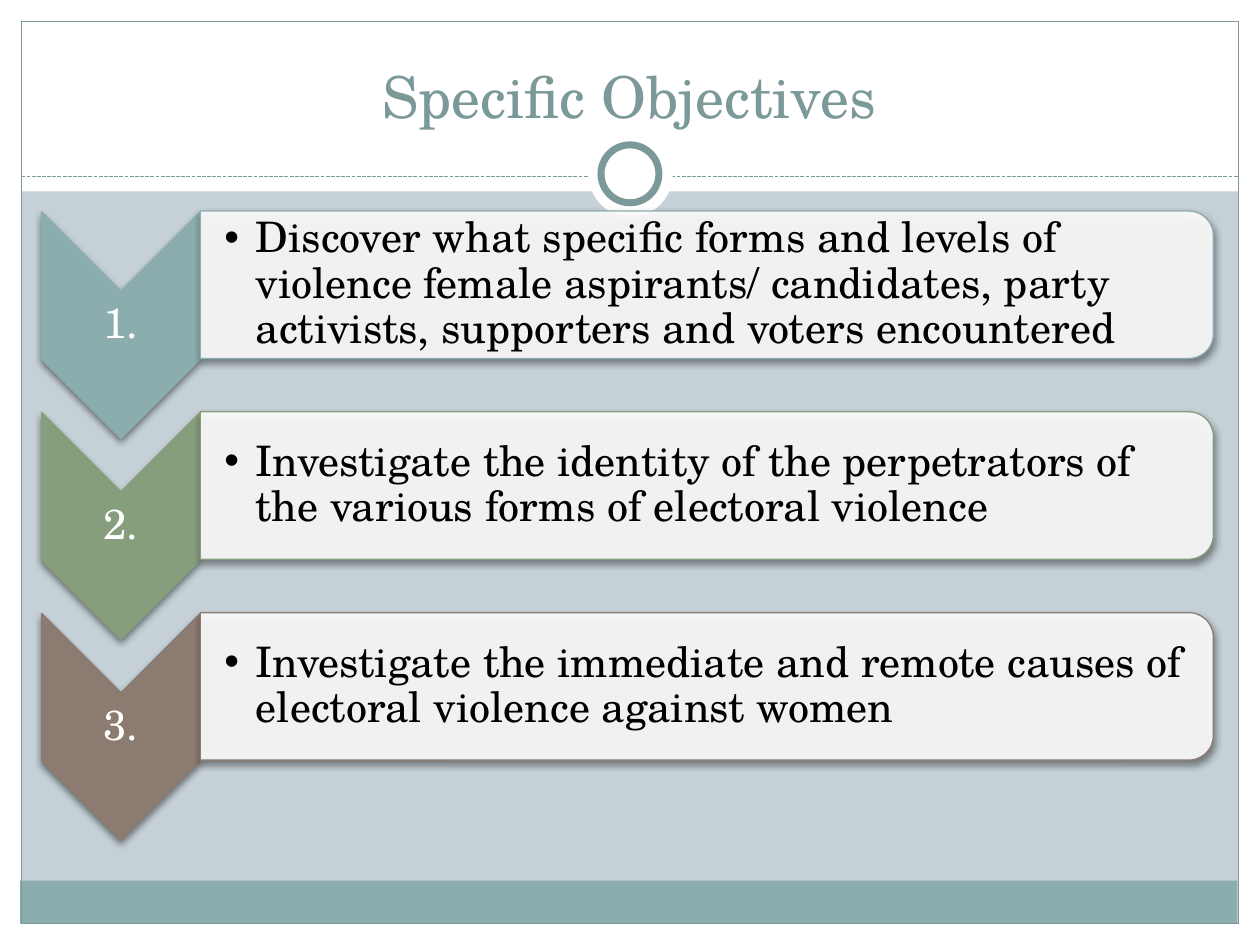
from dataclasses import dataclass

import pptx
import pptx.dml.color
import pptx.enum.dml
import pptx.enum.shapes
import pptx.enum.text
import pptx.oxml.ns
import pptx.util
from lxml import etree
from pptx.dml.color import RGBColor
from pptx.enum.shapes import MSO_SHAPE
from pptx.enum.text import MSO_ANCHOR, PP_ALIGN
from pptx.oxml.ns import qn
from pptx.util import Inches, Pt

WHITE = RGBColor(0xFF, 0xFF, 0xFF)
BLACK = RGBColor(0x00, 0x00, 0x00)
BACKGROUND = RGBColor(0xC5, 0xD1, 0xD7)
TEAL = RGBColor(0x8C, 0xAD, 0xAE)
DARK_TEAL = RGBColor(0x7C, 0x99, 0x9A)
GREEN = RGBColor(0x87, 0x9E, 0x7D)
BROWN = RGBColor(0x8C, 0x7B, 0x70)
FONT = "TeX Gyre Schola"
ROW_PITCH = 1.594


@dataclass(frozen=True)
class Box:
    left: float
    top: float
    width: float
    height: float

    def lengths(self) -> list:
        return [Inches(v) for v in (self.left, self.top, self.width, self.height)]

    def turned(self) -> "Box":
        """Unrotated frame that covers this box after a quarter turn."""
        return Box(self.left + (self.width - self.height) / 2,
                   self.top + (self.height - self.width) / 2,
                   self.height, self.width)


@dataclass(frozen=True)
class Objective:
    number: str
    statement: str
    color: RGBColor


OBJECTIVES = [
    Objective("1.", "Discover what specific forms and levels of violence female "
              "aspirants/ candidates, party activists, supporters and voters "
              "encountered", TEAL),
    Objective("2.", "Investigate the identity of the perpetrators of the various "
              "forms of electoral violence", GREEN),
    Objective("3.", "Investigate the immediate and remote causes of electoral "
              "violence against women", BROWN),
]


def add_panel(slide, kind, box: Box, fill=None, line=None, line_width=0.75):
    panel = slide.shapes.add_shape(kind, *box.lengths())
    panel.shadow.inherit = False
    if fill is None:
        panel.fill.background()
    else:
        panel.fill.solid()
        panel.fill.fore_color.rgb = fill
    if line is None:
        panel.line.fill.background()
    else:
        panel.line.color.rgb = line
        panel.line.width = Pt(line_width)
    return panel


def add_alpha(color_element, percent: int) -> None:
    etree.SubElement(color_element, qn("a:alpha"), val=str(percent * 1000))


def add_raised_panel(slide, kind, box: Box, fill, line):
    """Panel turned by 90 degrees, with a soft shadow below it."""
    panel = add_panel(slide, kind, box.turned(), fill, line)
    panel.rotation = 90
    effects = panel.element.spPr.find(qn("a:effectLst"))
    shadow = etree.SubElement(effects, qn("a:outerShdw"), blurRad=str(Pt(4)),
                              dist=str(Pt(2)), dir="5400000", rotWithShape="0")
    add_alpha(etree.SubElement(shadow, qn("a:srgbClr"), val=str(BLACK)), 45)
    return panel


def add_text(slide, box: Box, text: str, size: float, color: RGBColor,
             frame_format: dict, paragraph_format: dict):
    frame = slide.shapes.add_textbox(*box.lengths()).text_frame
    for name, value in {"word_wrap": True, **frame_format}.items():
        setattr(frame, name, value)
    paragraph = frame.paragraphs[0]
    for name, value in paragraph_format.items():
        setattr(paragraph, name, value)
    run = paragraph.add_run()
    run.text = text
    for name, value in {"name": FONT, "size": Pt(size)}.items():
        setattr(run.font, name, value)
    run.font.color.rgb = color
    return paragraph


def add_bullet(paragraph) -> None:
    properties = paragraph._p.get_or_add_pPr()
    properties.set("marL", str(Inches(0.25)))
    properties.set("indent", str(Inches(-0.25)))
    etree.SubElement(properties, qn("a:buFont"), typeface="Arial")
    etree.SubElement(properties, qn("a:buChar"), char="•")


def add_frame(slide) -> None:
    bands = [
        (Box(0, 7.33, 10, 0.17), WHITE),
        (Box(0, 0, 10, 1.52), WHITE),
        (Box(0, 0, 0.17, 7.5), WHITE),
        (Box(9.83, 0, 0.17, 7.5), WHITE),
        (Box(0.16, 6.99, 9.66, 0.34), TEAL),
    ]
    for box, fill in bands:
        add_panel(slide, MSO_SHAPE.RECTANGLE, box, fill)
    add_panel(slide, MSO_SHAPE.RECTANGLE, Box(0.17, 0.17, 9.66, 7.16), line=DARK_TEAL)

    divider = slide.shapes.add_connector(
        pptx.enum.shapes.MSO_CONNECTOR.STRAIGHT,
        Inches(0.17), Inches(1.4), Inches(9.83), Inches(1.4))
    divider.line.color.rgb = DARK_TEAL
    divider.line.width = Pt(0.75)
    divider.line.dash_style = pptx.enum.dml.MSO_LINE.SQUARE_DOT
    etree.SubElement(divider.element.spPr, qn("a:effectLst"))

    add_panel(slide, MSO_SHAPE.OVAL, Box(4.67, 1.05, 0.67, 0.67), WHITE)
    add_panel(slide, MSO_SHAPE.OVAL, Box(4.77, 1.15, 0.46, 0.46), WHITE, DARK_TEAL, 4)


def add_objective(slide, objective: Objective, offset: float) -> None:
    insets = {f"margin_{side}": Inches(0.02)
              for side in ("left", "top", "right", "bottom")}
    insets["vertical_anchor"] = MSO_ANCHOR.MIDDLE

    add_raised_panel(slide, MSO_SHAPE.CHEVRON, Box(0.33, 1.68 + offset, 1.26, 1.8),
                     objective.color, objective.color)
    add_text(slide, Box(0.33, 2.31 + offset, 1.26, 0.54), objective.number, 24, WHITE,
             insets, {"alignment": PP_ALIGN.CENTER, "line_spacing": 0.9})

    card = add_raised_panel(slide, MSO_SHAPE.ROUND_2_SAME_RECTANGLE,
                            Box(1.59, 1.675 + offset, 8.04, 1.17),
                            WHITE, objective.color)
    add_alpha(card.element.spPr.find(qn("a:solidFill"))[0], 90)
    statement = add_text(slide, Box(1.59, 1.73 + offset, 7.98, 1.06),
                         objective.statement, 24, BLACK,
                         {**insets, "margin_left": Inches(0.19)},
                         {"level": 1, "alignment": PP_ALIGN.LEFT, "line_spacing": 0.9})
    add_bullet(statement)


def main() -> None:
    deck = pptx.Presentation()
    deck.slide_width, deck.slide_height = Inches(10), Inches(7.5)
    slide = deck.slides.add_slide(deck.slide_layouts[6])
    slide.background.fill.solid()
    slide.background.fill.fore_color.rgb = BACKGROUND

    add_frame(slide)
    add_text(slide, Box(0.33, 0.25, 9.33, 0.83), "Specific Objectives", 33, DARK_TEAL,
             {"vertical_anchor": MSO_ANCHOR.BOTTOM}, {"alignment": PP_ALIGN.CENTER})
    for row, objective in enumerate(OBJECTIVES):
        add_objective(slide, objective, row * ROW_PITCH)
    deck.save("out.pptx")


if __name__ == "__main__":
    main()
